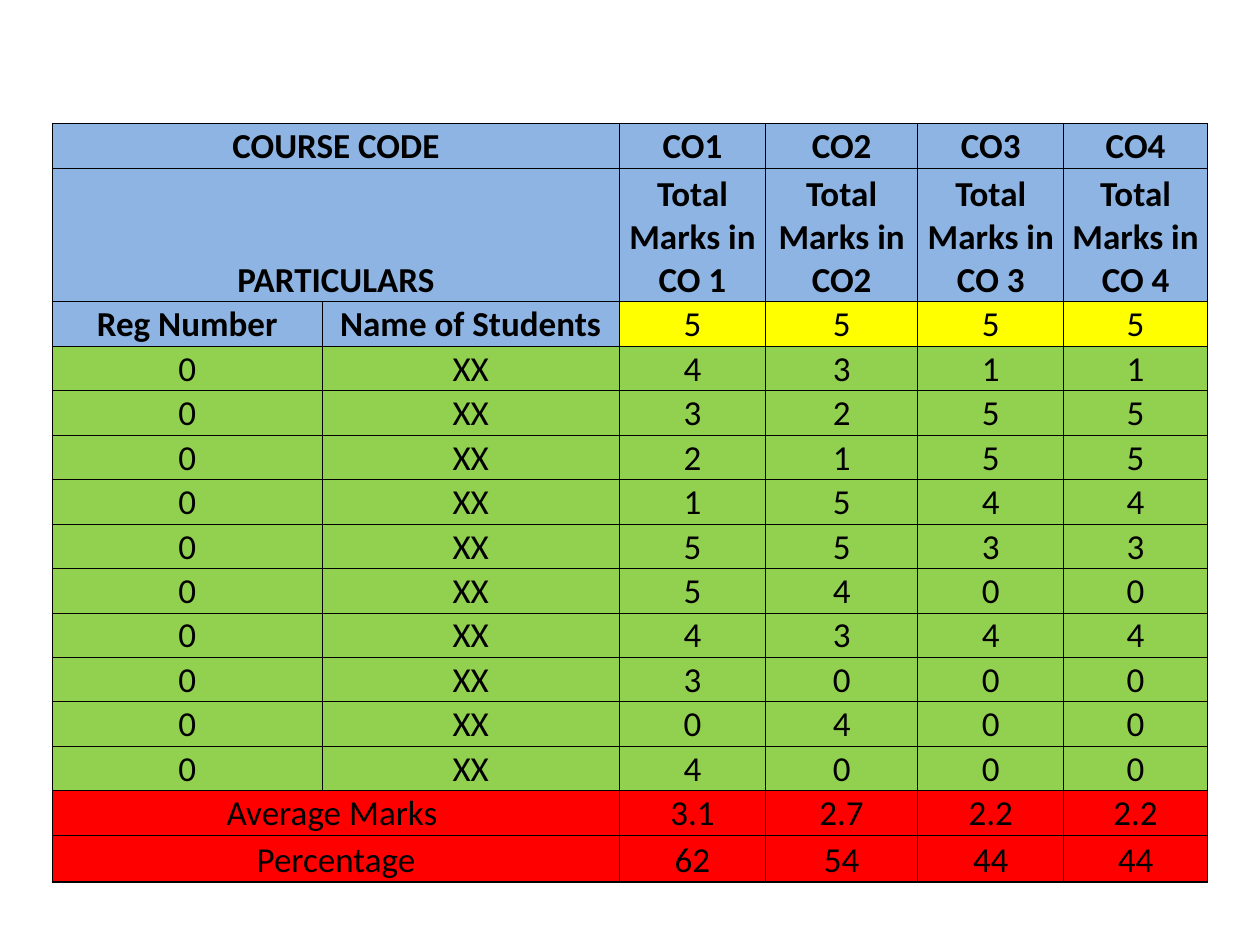
from dataclasses import dataclass

from lxml.etree import SubElement
from pptx import Presentation
from pptx.dml.color import RGBColor
from pptx.enum.text import MSO_ANCHOR, PP_ALIGN
from pptx.oxml.ns import qn
from pptx.table import Table, _Cell
from pptx.util import Pt

BLACK = RGBColor(0x00, 0x00, 0x00)
BLUE = RGBColor(0x8D, 0xB4, 0xE3)
YELLOW = RGBColor(0xFF, 0xFF, 0x00)
GREEN = RGBColor(0x92, 0xD0, 0x50)
RED = RGBColor(0xFF, 0x00, 0x00)

FONT = "Calibri"
SIZE = Pt(20)
THIN, THICK = Pt(0.5), Pt(1)
LEFT, TOP = Pt(30), Pt(70.6)
WIDTHS = [Pt(w) for w in (154, 170, 83.5, 87, 83.5, 82)]
HEIGHT, TALL, LAST = Pt(25.4), Pt(76.5), Pt(26.8)


@dataclass
class Row:
    """One table row; a single label spans the first two columns."""
    labels: list[str]
    marks: list[str]
    head: RGBColor
    fill: RGBColor
    height: int = HEIGHT
    bold: bool = False
    bold_marks: bool = False


SCORES = ["4311", "3255", "2155", "1544", "5533",
          "5400", "4344", "3000", "0400", "4000"]

ROWS = [
    Row(["COURSE CODE"], ["CO1", "CO2", "CO3", "CO4"],
        BLUE, BLUE, bold=True, bold_marks=True),
    Row(["PARTICULARS"],
        [f"Total Marks in {code}" for code in ("CO 1", "CO2", "CO 3", "CO 4")],
        BLUE, BLUE, TALL, bold=True, bold_marks=True),
    Row(["Reg Number", "Name of Students"], ["5"] * 4, BLUE, YELLOW, bold=True),
    *[Row(["0", "XX"], list(marks), GREEN, GREEN) for marks in SCORES],
    Row(["Average Marks "], ["3.1", "2.7", "2.2", "2.2"], RED, RED),
    Row(["Percentage"], ["62", "54", "44", "44"], RED, RED, LAST),
]


def add_edges(cell: _Cell, left: int, top: int, bottom: int) -> None:
    props = cell._tc.get_or_add_tcPr()
    edges = {"a:lnL": left, "a:lnR": THIN, "a:lnT": top, "a:lnB": bottom}
    for tag, width in edges.items():
        line = SubElement(props, qn(tag), w=str(int(width)))
        fill = SubElement(line, qn("a:solidFill"))
        SubElement(fill, qn("a:srgbClr"), val=str(BLACK))


def style_cell(cell: _Cell, text: str, fill: RGBColor, bold: bool) -> None:
    cell.fill.solid()
    cell.fill.fore_color.rgb = fill
    cell.vertical_anchor = MSO_ANCHOR.BOTTOM
    cell.margin_left = cell.margin_right = cell.margin_top = Pt(0.75)
    cell.margin_bottom = 0
    cell.text_frame.text = text
    para = cell.text_frame.paragraphs[0]
    para.alignment = PP_ALIGN.CENTER
    for run in para.runs:
        run.font.name = FONT
        run.font.size = SIZE
        run.font.bold = bold
        run.font.color.rgb = BLACK


def fill_row(table: Table, index: int, row: Row) -> None:
    table.rows[index].height = row.height
    top = THICK if index == 0 else THIN
    bottom = THICK if index == len(ROWS) - 1 else THIN
    wide = len(row.labels) == 1
    texts = row.labels + [""] * wide + row.marks
    for col, text in enumerate(texts):
        cell = table.cell(index, col)
        add_edges(cell, THICK if col == 0 else THIN, top, bottom)
        if col < 2:
            style_cell(cell, text, row.head, row.bold)
        else:
            style_cell(cell, text, row.fill, row.bold_marks)
    if wide:
        table.cell(index, 0).merge(table.cell(index, 1))


def main() -> None:
    deck = Presentation()
    deck.slide_width, deck.slide_height = Pt(720), Pt(540)
    slide = deck.slides.add_slide(deck.slide_layouts[6])
    height = sum(row.height for row in ROWS)
    frame = slide.shapes.add_table(
        len(ROWS), len(WIDTHS), LEFT, TOP, sum(WIDTHS), height)
    table = frame.table
    table.first_row = table.horz_banding = False
    for col, width in zip(table.columns, WIDTHS):
        col.width = width
    for index, row in enumerate(ROWS):
        fill_row(table, index, row)
    deck.save("out.pptx")


if __name__ == "__main__":
    main()
